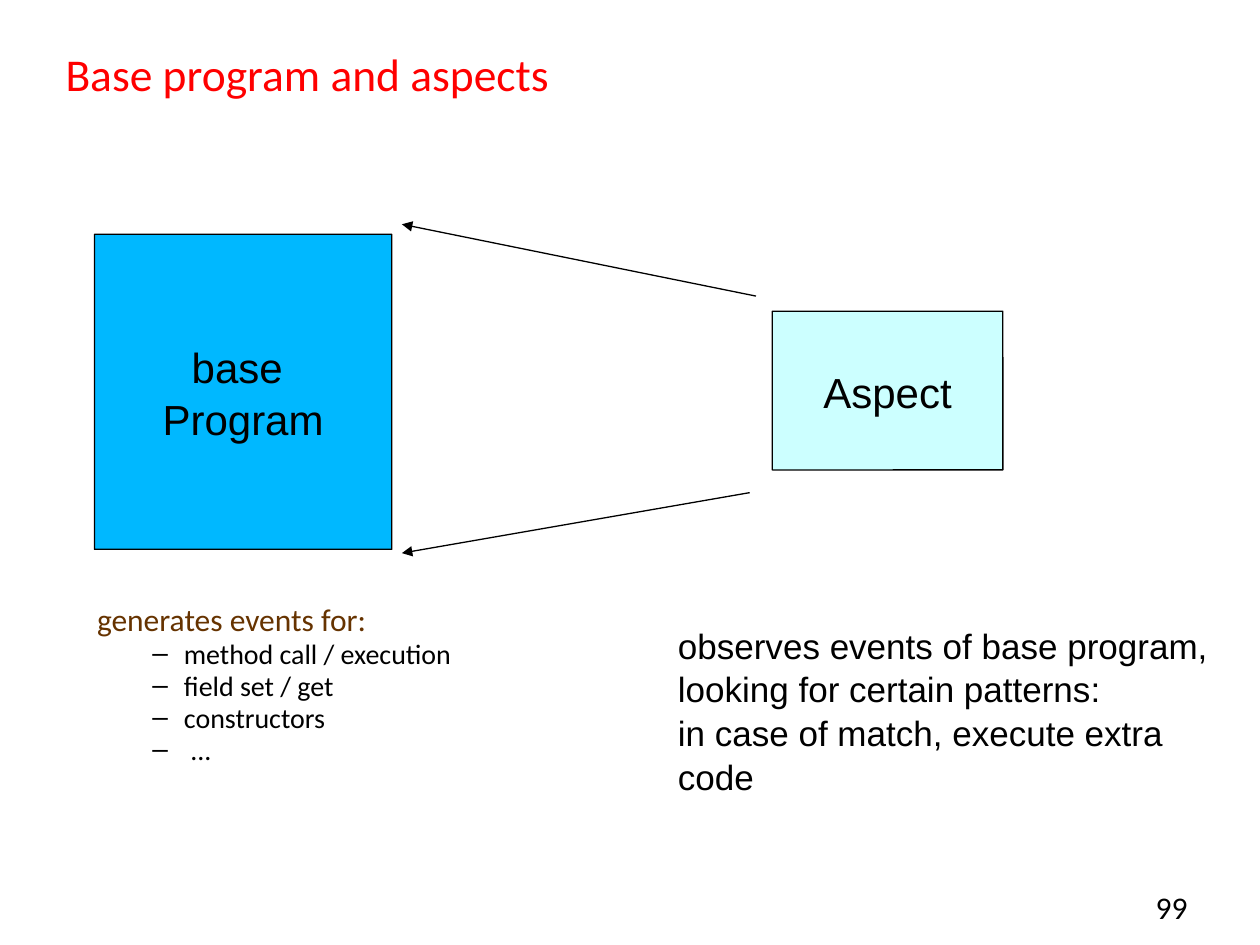
from lxml import etree
from pptx import Presentation
from pptx import util as u
from pptx.dml.color import RGBColor
from pptx.enum import shapes, text
from pptx.oxml.ns import qn

BLACK = RGBColor(0x00, 0x00, 0x00)
RED = RGBColor(0xFF, 0x00, 0x00)
BROWN = RGBColor(0x66, 0x33, 0x00)
BLUE = RGBColor(0x00, 0xB8, 0xFF)
PALE_CYAN = RGBColor(0xCC, 0xFF, 0xFF)

LEFT, CENTER, RIGHT = text.PP_ALIGN.LEFT, text.PP_ALIGN.CENTER, text.PP_ALIGN.RIGHT
ZERO_MARGINS = dict.fromkeys(
    ("margin_left", "margin_top", "margin_right", "margin_bottom"), 0)


def apply_format(target, values):
    for name, value in values.items():
        setattr(target, name, value)


def place(shape, left, top, width, height):
    apply_format(shape, {"left": u.Inches(left), "top": u.Inches(top),
                         "width": u.Inches(width), "height": u.Inches(height)})


def write_paragraph(paragraph, words, font, size, color, **layout):
    run = paragraph.add_run()
    run.text = words
    apply_format(run.font, {"name": font, "size": u.Pt(size)})
    run.font.color.rgb = color
    apply_format(paragraph, layout)


def write_lines(frame, lines, *style, **layout):
    for index, line in enumerate(lines):
        paragraph = frame.add_paragraph() if index else frame.paragraphs[0]
        write_paragraph(paragraph, line, *style, **layout)


def set_bullet(paragraph, indent, bullet=None):
    properties = paragraph._p.get_or_add_pPr()
    properties.set("marL", str(u.Inches(indent)))
    properties.set("indent", str(u.Inches(-0.25)))
    if bullet:
        etree.SubElement(properties, qn("a:buChar")).set("char", bullet)
    else:
        etree.SubElement(properties, qn("a:buNone"))


def add_title(slide, words):
    title = slide.shapes.title
    place(title, 0.42, 0.33, 9.08, 0.5)
    apply_format(title.text_frame, {"vertical_anchor": text.MSO_ANCHOR.MIDDLE,
                                    "auto_size": text.MSO_AUTO_SIZE.NONE})
    write_lines(title.text_frame, [words], "Calibri", 26, RED, alignment=LEFT)


def add_event_list(slide, heading, events):
    body = slide.placeholders[1]
    place(body, 0.67, 4.77, 3.15, 1.65)
    frame = body.text_frame
    frame.auto_size = text.MSO_AUTO_SIZE.NONE
    write_lines(frame, [heading], "Calibri", 18, BROWN,
                line_spacing=0.8, space_before=u.Pt(2))
    set_bullet(frame.paragraphs[0], 0.25)
    for event in events:
        paragraph = frame.add_paragraph()
        write_paragraph(paragraph, event, "Calibri", 16, BLACK, level=1,
                        line_spacing=0.8, space_before=u.Pt(3))
        set_bullet(paragraph, 0.69, "–")


def add_box(slide, lines, fill, *position):
    box = slide.shapes.add_shape(shapes.MSO_SHAPE.ROUNDED_RECTANGLE,
                                 *map(u.Inches, position))
    box.adjustments[0] = 0.001
    box.shadow.inherit = False
    box.fill.solid()
    box.fill.fore_color.rgb = fill
    box.line.color.rgb = BLACK
    box.line.width = u.Pt(0.75)
    apply_format(box.text_frame, {**ZERO_MARGINS,
                                  "vertical_anchor": text.MSO_ANCHOR.MIDDLE})
    write_lines(box.text_frame, lines, "Arial", 24, BLACK,
                alignment=CENTER, line_spacing=1.04)


def add_arrow(slide, *ends):
    arrow = slide.shapes.add_connector(shapes.MSO_CONNECTOR.STRAIGHT,
                                       *map(u.Inches, ends))
    arrow.line.color.rgb = BLACK
    arrow.line.width = u.Pt(0.75)
    etree.SubElement(arrow.line._get_or_add_ln(), qn("a:tailEnd")).set("type", "triangle")
    etree.SubElement(arrow._element.spPr, qn("a:effectLst"))


def add_text(slide, lines, position, style, frame_format, **layout):
    box = slide.shapes.add_textbox(*map(u.Inches, position))
    apply_format(box.text_frame, {"word_wrap": True, **frame_format})
    write_lines(box.text_frame, lines, *style, **layout)


def main():
    presentation = Presentation()
    apply_format(presentation, {"slide_width": u.Inches(10),
                                "slide_height": u.Inches(7.5)})
    slide = presentation.slides.add_slide(presentation.slide_layouts[1])

    # Title and page number
    add_title(slide, "Base program and aspects")
    add_text(slide, ["99 "], (8.83, 7, 0.75, 0.5), ("Calibri", 18, BLACK), {},
             alignment=RIGHT)

    # Base program and the events it generates
    add_box(slide, ["base ", "Program"], BLUE, 0.75, 1.86, 2.36, 2.5)
    add_event_list(slide, "generates events for:",
                   ["method call / execution", "field set / get",
                    "constructors", " ..."])

    # Aspect and what it observes
    add_box(slide, ["Aspect"], PALE_CYAN, 6.13, 2.47, 1.83, 1.26)
    add_text(slide, ["observes events of base program,",
                     "looking for certain patterns:",
                     "in case of match, execute extra code"],
             (5.38, 4.94, 4.52, 1.04), ("Arial", 20, BLACK), ZERO_MARGINS,
             line_spacing=1.04)

    # Arrows from the aspect to the base program
    add_arrow(slide, 6, 2.35, 3.19, 1.78)
    add_arrow(slide, 5.95, 3.91, 3.19, 4.39)

    presentation.save("out.pptx")


if __name__ == "__main__":
    main()
